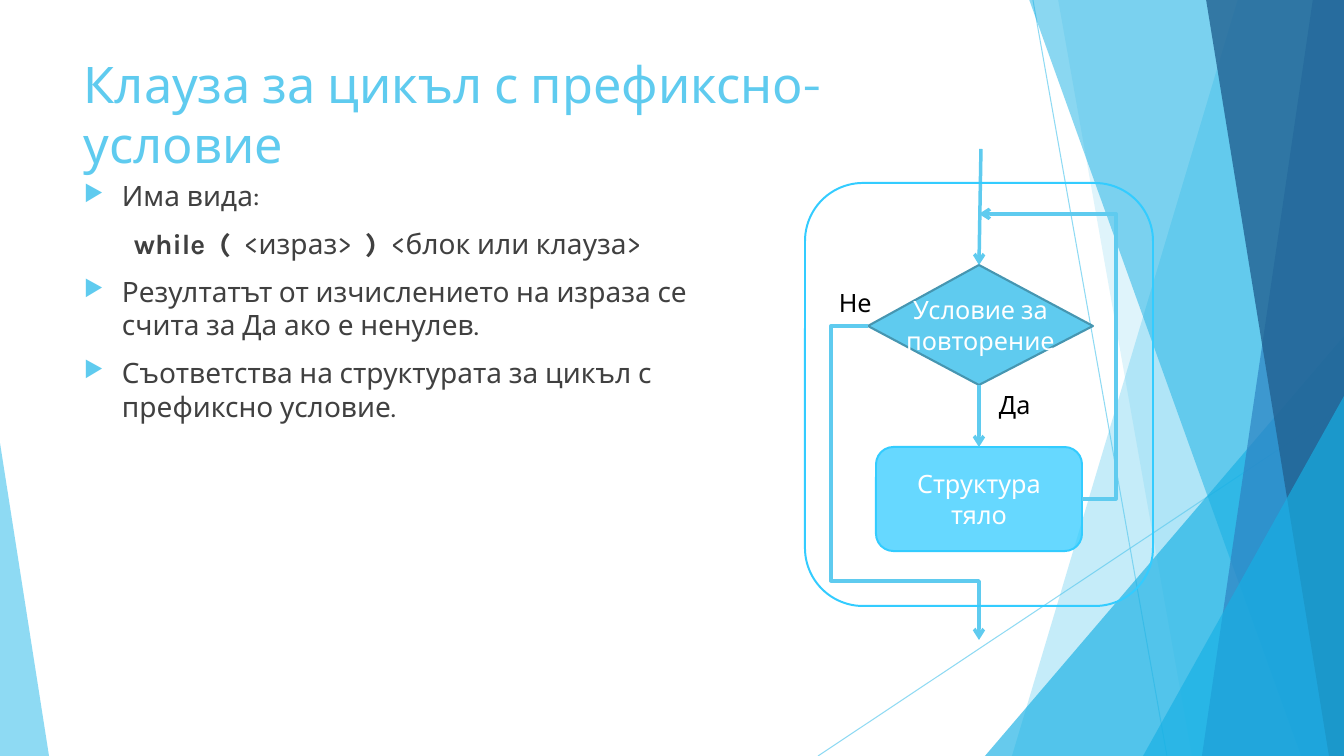
from lxml.etree import SubElement
from pptx import Presentation
from pptx.dml.color import RGBColor
from pptx.enum.shapes import MSO_CONNECTOR as Link, MSO_SHAPE as Preset
from pptx.enum.text import MSO_ANCHOR as Anchor, PP_ALIGN as Align
from pptx.oxml.ns import qn
from pptx.util import Emu, Pt

WIDTH, HEIGHT = 1344, 756
SCALE = 12192000 / WIDTH
FONT = "Karla"
COLORS = {
    "sky": "5FCBEF", "azure": "17B0E4", "blue": "2E83C3", "navy": "226292",
    "cyan": "33CCFF", "edge": "4696B1", "body": "404040",
    "black": "000000", "white": "FFFFFF",
}


def px(*lengths):
    return [Emu(round(length * SCALE)) for length in lengths]


def rgb(color):
    return RGBColor.from_string(COLORS[color])


def apply(target, values):
    for name, value in values.items():
        setattr(target, name, value)


def fade(properties, opacity):
    for color in properties.iter(qn("a:srgbClr")):
        SubElement(color, qn("a:alpha"), val=str(opacity * 1000))


def paint(shape, fill=None, opacity=100, edge=None, weight=1.42):
    shape.shadow.inherit = False
    if fill:
        shape.fill.solid()
        shape.fill.fore_color.rgb = rgb(fill)
        if opacity < 100:
            fade(shape._element.spPr, opacity)
    else:
        shape.fill.background()
    if edge:
        shape.line.color.rgb = rgb(edge)
        shape.line.width = Pt(weight)
    else:
        shape.line.fill.background()


def polygon(slide, points):
    start, *rest = points
    outline = slide.shapes.build_freeform(*start, scale=SCALE)
    outline.add_line_segments(rest, close=True)
    return outline.convert_to_shape()


def connector(slide, start, end, kind=Link.STRAIGHT, weight=2.5, arrow=True):
    line = slide.shapes.add_connector(kind, *px(*start, *end))
    line.line.color.rgb = rgb("sky")
    line.line.width = Pt(weight)
    properties = line._element.spPr
    if arrow:
        SubElement(properties.find(qn("a:ln")), qn("a:tailEnd"), type="arrow")
    SubElement(properties, qn("a:effectLst"))
    return line


def bent_arrow(slide, start, end, via_x, via_y):
    arrow = connector(slide, start, end, Link.ELBOW)
    geometry = arrow._element.spPr.find(qn("a:prstGeom"))
    geometry.set("prst", "bentConnector4")
    guides = geometry.find(qn("a:avLst"))
    turns = ((via_x - start[0]) / (end[0] - start[0]),
             (via_y - start[1]) / (end[1] - start[1]))
    for number, turn in enumerate(turns, 1):
        SubElement(guides, qn("a:gd"), name=f"adj{number}",
                   fmla=f"val {round(turn * 100000)}")


def write(paragraph, text, size, color, bold=False):
    run = paragraph.add_run()
    run.text = text
    apply(run.font, {"name": FONT, "size": Pt(size), "bold": bold})
    run.font.color.rgb = rgb(color)


def text_box(slide, box, wrap=True):
    frame = slide.shapes.add_textbox(*px(*box)).text_frame
    apply(frame, {"word_wrap": wrap, "vertical_anchor": Anchor.TOP})
    return frame


def caption(shape, text):
    frame = shape.text_frame
    apply(frame, {"word_wrap": True, "vertical_anchor": Anchor.MIDDLE})
    frame.paragraphs[0].alignment = Align.CENTER
    write(frame.paragraphs[0], text, 18, "white")


def backdrop(slide, box):
    left, top, width, height = box
    right, bottom = left + width, top + height
    for start, end in (((1033, top), (1167, bottom)),
                       ((right, 406), (818, bottom))):
        ray = connector(slide, start, end, weight=0.75, arrow=False)
        fade(ray._element.spPr, 70)

    def band(upper, lower, color, opacity):
        corners = [(upper, top - 1), (right, top - 1), (right, bottom), (lower, bottom)]
        paint(polygon(slide, corners), color, opacity)

    def wedge(near, far, peak_x, peak_y, color, opacity):
        corners = [(near, bottom), (peak_x, peak_y), (far, bottom)]
        paint(polygon(slide, corners), color, opacity)

    band(1238, 1012, "sky", 36)
    band(1058, 1192, "sky", 20)
    wedge(985, right, right, 336, "azure", 66)
    band(1029, 1301, "azure", 50)
    band(1313, 1202, "blue", 70)
    band(1206, 1329, "navy", 80)
    wedge(1143, right, right, 396, "azure", 66)
    wedge(left, 49, left, 443, "sky", 70)


def heading(slide, box):
    frame = text_box(slide, box)
    write(frame.paragraphs[0], "Клауза за цикъл с префиксно-условие", 36, "sky")


def add_bullet(properties):
    color = SubElement(properties, qn("a:buClr"))
    SubElement(color, qn("a:srgbClr"), val=COLORS["sky"])
    SubElement(properties, qn("a:buSzPct"), val="80000")
    SubElement(properties, qn("a:buChar"), char="▶")


def explanation(slide, box):
    syntax = [("while  (", True), ("  <израз>  ", False),
              (")  ", True), ("<блок или клауза>", False)]
    points = [
        (True, [("Има вида:", False)]),
        (False, syntax),
        (True, [("Резултатът от изчислението на израза се счита за Да ако е ненулев.", False)]),
        (True, [("Съответства на структурата за цикъл с префиксно условие.", False)]),
    ]
    frame = text_box(slide, box)
    for index, (bulleted, pieces) in enumerate(points):
        point = frame.add_paragraph() if index else frame.paragraphs[0]
        point.space_before = Pt(10)
        properties = point._p.get_or_add_pPr()
        margin, hang = px(38, -38) if bulleted else px(50, 0)
        properties.set("marL", str(margin))
        properties.set("indent", str(hang))
        if bulleted:
            add_bullet(properties)
        for text, bold in pieces:
            write(point, text, 20, "body", bold)


def flowchart(slide, box):
    left, top, width, height = box
    axis = left + 174

    def at(x, y):
        return left + x, top + y

    condition = polygon(slide, [at(63, 143), at(174, 82), at(288, 143), at(174, 202)])
    paint(condition, "sky", edge="edge", weight=1.5)
    caption(condition, "Условие за повторение")

    bent_arrow(slide, at(63, 143), (axis, top + 457), left + 26, top + 398)
    for answer, x, y in (("Не", 24, 99), ("Да", 184, 201)):
        frame = text_box(slide, (*at(x, y), 58, 39), wrap=False)
        write(frame.paragraphs[0], answer, 18, "black")

    loop_body = slide.shapes.add_shape(
        Preset.ROUNDED_RECTANGLE, *px(*at(71, 264), 206, 104))
    paint(loop_body, "cyan", 75, "cyan")
    caption(loop_body, "Структура тяло")

    connector(slide, at(176, -34), (axis, top + 82))
    connector(slide, (axis, top + 202), (axis, top + 264))
    bent_arrow(slide, at(277, 316), (axis, top + 31), left + 311, top + 31)

    border = slide.shapes.add_shape(Preset.ROUNDED_RECTANGLE, *px(*box))
    paint(border, edge="cyan")


def main():
    deck = Presentation()
    deck.slide_width, deck.slide_height = px(WIDTH, HEIGHT)
    slide = deck.slides.add_slide(deck.slide_layouts[6])
    backdrop(slide, (0, 0, WIDTH, HEIGHT))
    heading(slide, (74, 48, 948, 97))
    explanation(slide, (74, 174, 673, 541))
    flowchart(slide, (805, 183, 348, 423))
    deck.save("out.pptx")


if __name__ == "__main__":
    main()
